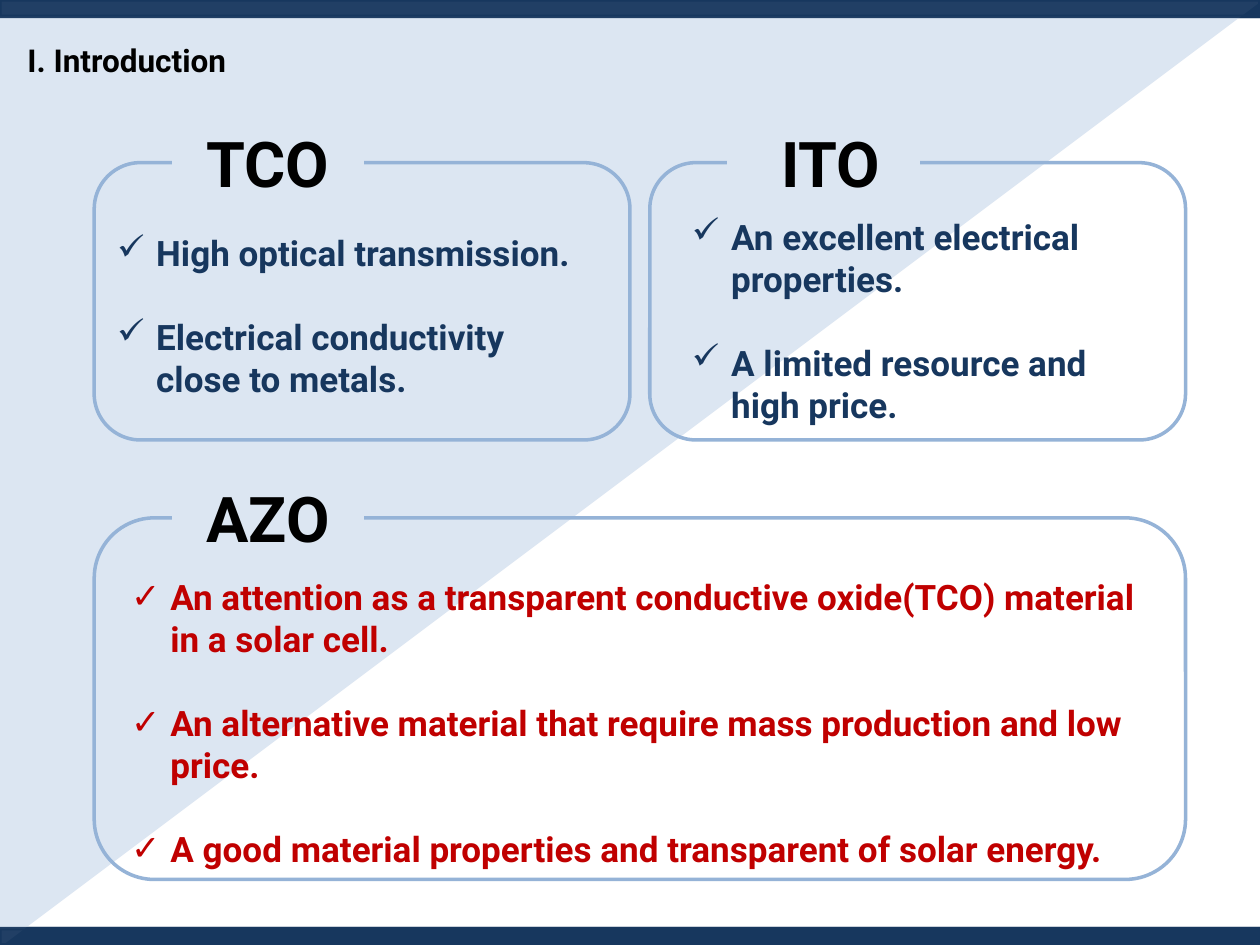
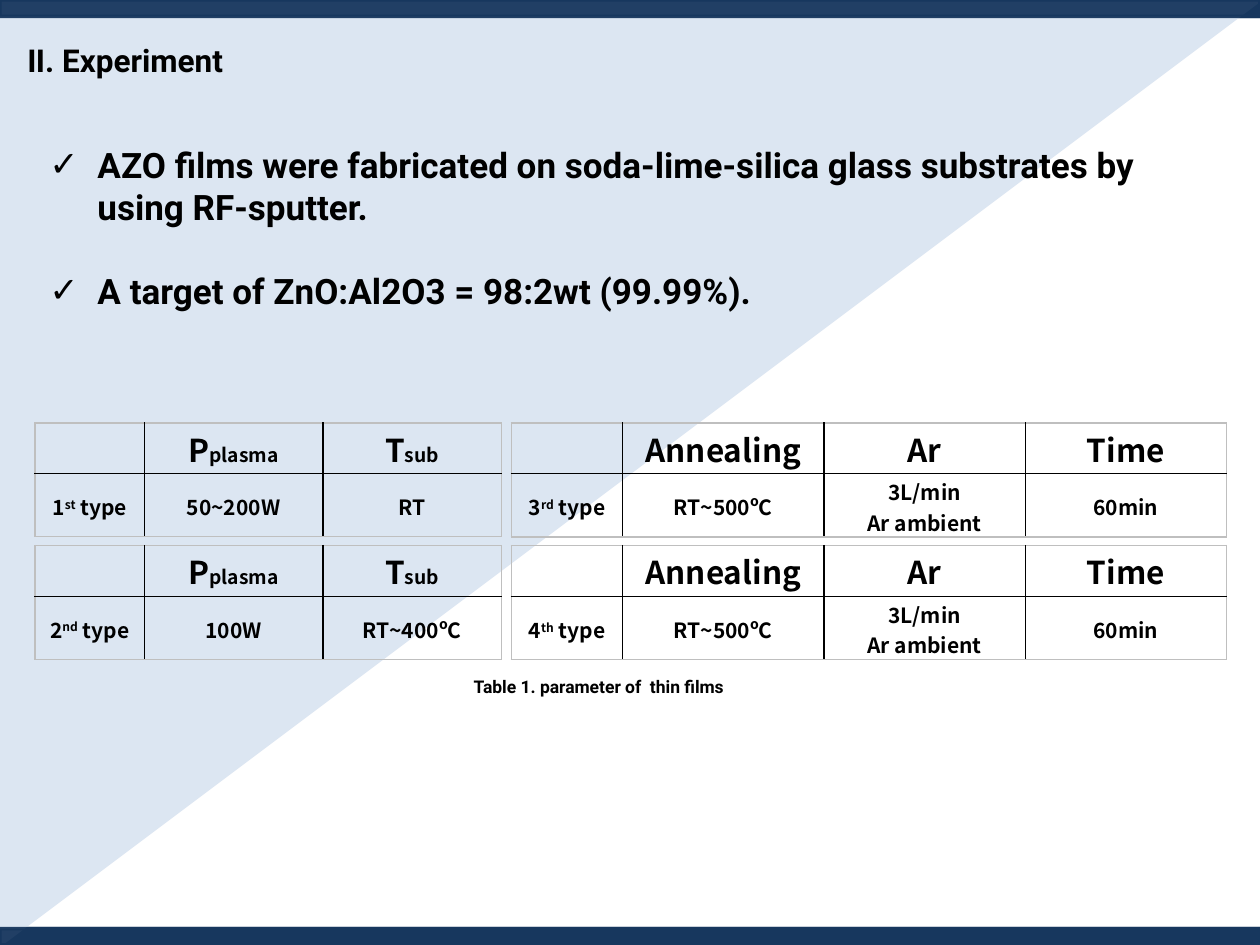
from lxml.etree import SubElement
from pptx import Presentation
from pptx.dml.color import RGBColor
from pptx.enum.shapes import MSO_SHAPE
from pptx.enum.text import MSO_ANCHOR, MSO_AUTO_SIZE, PP_ALIGN
from pptx.oxml.ns import qn
from pptx.util import Cm, Pt

NAVY = RGBColor(0x17, 0x37, 0x5E)
PALE = RGBColor(0xDC, 0xE6, 0xF2)
OUTLINE = RGBColor(0x95, 0xB3, 0xD7)
RED = RGBColor(0xC0, 0x00, 0x00)
BLACK = RGBColor(0x00, 0x00, 0x00)
GREY = RGBColor(0xBF, 0xBF, 0xBF)


class Deck:
    text_font = "Roboto"
    table_font = "Noto Sans CJK KR"

    def __init__(self):
        self.presentation = Presentation()
        self.presentation.slide_width = Cm(25.4)
        self.presentation.slide_height = Cm(19.05)
        self.layout = self.presentation.slide_layouts[1]
        self.slide = None

    def start(self, heading):
        first = self.slide is None
        self.slide = self.presentation.slides.add_slide(self.layout)
        if first:
            self.backdrop()
        title = self.slide.shapes.title
        self.place(title, 0.3, 0.69, 10, 1.02)
        self.set_lines(title, [heading], 18, BLACK)

    def backdrop(self):
        parts = self.bands()
        triangle = self.shape(MSO_SHAPE.RIGHT_TRIANGLE, 0, 0, 25.4, 19.05, PALE, PALE)
        triangle.element.spPr.find(qn("a:xfrm")).set("flipV", "1")
        parts += [triangle, *self.bands()]
        tree = self.layout.shapes.element
        for number, part in enumerate(parts):
            part.element.nvSpPr.cNvPr.set("id", str(100 + number))
            tree.insert(2 + number, part.element)

    def bands(self):
        bands = []
        for top in (18.72, 0):
            band = self.shape(MSO_SHAPE.RECTANGLE, 0, top, 25.4, 0.33, NAVY, NAVY)
            for color in band.element.spPr.iter(qn("a:srgbClr")):
                SubElement(color, qn("a:alpha"), val="95000")
            bands.append(band)
        return bands

    def shape(self, kind, left, top, width, height, line, fill=None):
        shape = self.slide.shapes.add_shape(kind, Cm(left), Cm(top), Cm(width), Cm(height))
        shape.shadow.inherit = False
        shape.line.color.rgb = line
        shape.line.width = Pt(2)
        if fill is None:
            shape.fill.background()
        else:
            shape.fill.solid()
            shape.fill.fore_color.rgb = fill
        return shape

    def place(self, item, left, top, width, height):
        item.left, item.top, item.width, item.height = map(Cm, (left, top, width, height))

    def set_lines(self, item, lines, size, color):
        frame = item.text_frame
        frame.word_wrap = True
        frame.auto_size = MSO_AUTO_SIZE.NONE
        frame.vertical_anchor = MSO_ANCHOR.TOP
        frame.text = "\n".join(lines)
        for paragraph in frame.paragraphs:
            paragraph.alignment = PP_ALIGN.LEFT
            paragraph.space_before = Pt(0)
            self.style(paragraph.font, self.text_font, size, color)

    def style(self, font, name, size, color):
        font.name = name
        font.size = Pt(size)
        font.bold = True
        font.color.rgb = color

    def text(self, lines, left, top, width, height, size, color=BLACK):
        box = self.slide.shapes.add_textbox(Cm(left), Cm(top), Cm(width), Cm(height))
        self.set_lines(box, lines, size, color)
        return box

    def checks(self, item, indent):
        for number, paragraph in enumerate(item.text_frame.paragraphs):
            paragraph.space_before = Pt(24 if number else 0)
            properties = paragraph._p.get_or_add_pPr()
            properties.set("marL", str(Cm(indent)))
            properties.set("indent", str(-Cm(indent)))
            bullet = properties.makeelement(qn("a:buChar"), {"char": "✓"})
            properties.find(qn("a:defRPr")).addprevious(bullet)

    def body_checks(self, lines, left, top, width, height, color, indent):
        body = self.slide.placeholders[1]
        self.place(body, left, top, width, height)
        self.set_lines(body, lines, 20, color)
        self.checks(body, indent)

    def box_checks(self, lines, left, top, width, height, color, indent):
        box = self.text(lines, left, top, width, height, 20, color)
        self.checks(box, indent)

    def panel(self, name, left, top, width, height, name_offset):
        self.shape(MSO_SHAPE.ROUNDED_RECTANGLE, left, top, width, height, OUTLINE)
        self.shape(MSO_SHAPE.RECTANGLE, left + 1.6, top - 0.69, 3.81, 1.38, PALE, PALE)
        self.text([name], left + name_offset, top - 0.9, 3.61, 1.82, 36)

    def table(self, rows, left, top, widths):
        heights = (1.02, 1.27)
        table = self.slide.shapes.add_table(
            len(rows), len(widths), Cm(left), Cm(top), Cm(sum(widths)), Cm(sum(heights))
        ).table
        table.first_row = table.horz_banding = False
        for column, width in zip(table.columns, widths):
            column.width = Cm(width)
        for row, height in zip(table.rows, heights):
            row.height = Cm(height)
        for r, row in enumerate(rows):
            for c, lines in enumerate(row):
                cell = table.cell(r, c)
                edges = {
                    "lnL": c == 0,
                    "lnR": c == len(widths) - 1,
                    "lnT": r == 0,
                    "lnB": r == len(rows) - 1,
                }
                self.cell(cell, lines, edges)
                cell.vertical_anchor = MSO_ANCHOR.MIDDLE if r else MSO_ANCHOR.TOP

    def cell(self, cell, lines, edges):
        properties = cell._tc.get_or_add_tcPr()
        for edge, outer in edges.items():
            line = SubElement(properties, qn(f"a:{edge}"), w=str(Pt(1)))
            fill = SubElement(line, qn("a:solidFill"))
            SubElement(fill, qn("a:srgbClr"), val=str(GREY if outer else BLACK))
        cell.fill.background()
        cell.margin_top = Cm(0.05)
        cell.margin_bottom = Cm(0)
        for number, runs in enumerate(lines):
            frame = cell.text_frame
            paragraph = frame.add_paragraph() if number else frame.paragraphs[0]
            paragraph.alignment = PP_ALIGN.CENTER
            for content, size, *raised in runs:
                run = paragraph.add_run()
                run.text = content
                self.style(run.font, self.table_font, size, BLACK)
                if raised:
                    run._r.get_or_add_rPr().set("baseline", "30000")


def heads(*names):
    return [[]] + [[[(name, 18)] + ([(sub, 11)] if sub else [])] for name, sub in names]


def values(ordinal, suffix, *entries):
    label = [[(ordinal, 12), (suffix, 12, True), (" type", 12)]]
    return [label] + [[[(line, 12)] for line in entry.split("\n")] for entry in entries]


def introduction(deck):
    deck.start("Ⅰ. Introduction")
    deck.panel("AZO", 1.9, 10.44, 22, 7.29, 2.01)
    deck.body_checks(
        [
            "An attention as a transparent conductive oxide(TCO) material in a solar cell.",
            "An alternative material that require mass production and low price.",
            "A good material properties and transparent of solar energy.",
        ],
        2.39, 11.48, 21.21, 6.25, RED, 0.79,
    )
    deck.panel("TCO", 1.9, 3.28, 10.8, 5.59, 2.01)
    deck.panel("ITO", 13.1, 3.28, 10.8, 5.59, 2.4)
    deck.box_checks(
        ["High optical transmission.", "Electrical conductivity close to metals."],
        2.11, 4.55, 10, 3.68, NAVY, 0.79,
    )
    deck.box_checks(
        ["An excellent electrical properties.", "A limited resource and high price."],
        13.7, 4.22, 9.6, 4.52, NAVY, 0.79,
    )


def experiment(deck):
    deck.start("Ⅱ. Experiment")
    deck.body_checks(
        [
            "AZO films were fabricated on soda-lime-silica glass substrates by using RF-sputter.",
            "A target of ZnO:Al2O3 = 98:2wt (99.99%).",
        ],
        0.74, 2.77, 23.39, 3.68, BLACK, 0.97,
    )
    sputter_heads = heads(("P", "plasma"), ("T", "sub"))
    anneal_heads = heads(("Annealing", ""), ("Ar", ""), ("Time", ""))
    anneal_values = ("RT~500ºC", "3L/min\nAr ambient", "60min")
    films = (
        (8.53, ("1", "st", "50~200W", "RT"), ("3", "rd")),
        (11, ("2", "nd", "100W", "RT~400ºC"), ("4", "th")),
    )
    for top, sputter, anneal in films:
        deck.table([sputter_heads, values(*sputter)], 0.71, top, [2.2, 3.6, 3.6])
        deck.table(
            [anneal_heads, values(*anneal, *anneal_values)], 10.31, top, [2.24] + [4.06] * 3
        )
    deck.text(["Table 1. parameter of  thin films"], 9.3, 13.51, 6.25, 0.69, 10)


def main():
    deck = Deck()
    introduction(deck)
    experiment(deck)
    deck.presentation.save("out.pptx")


if __name__ == "__main__":
    main()
